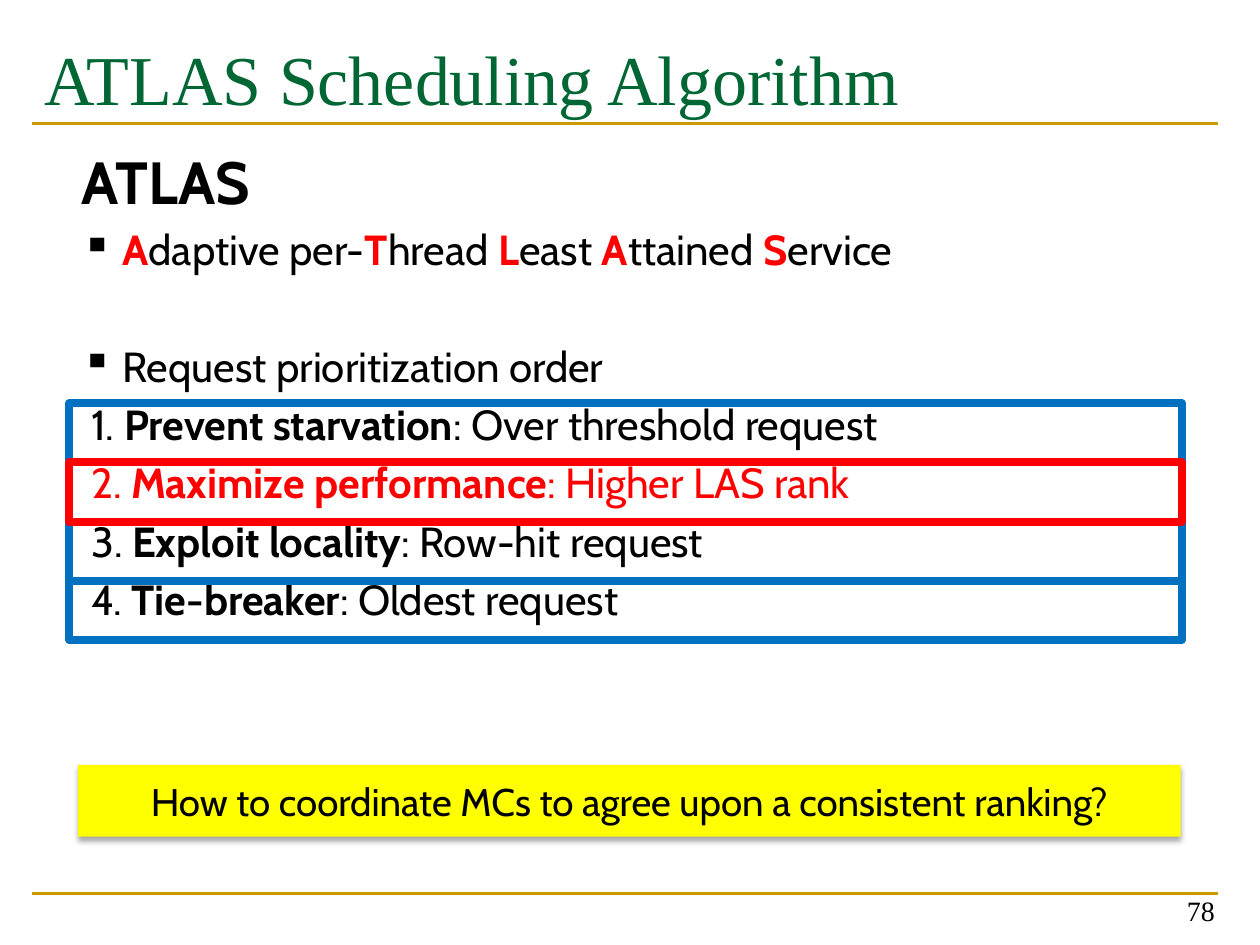
from pptx import Presentation
from pptx.dml.color import RGBColor
from pptx.enum.shapes import MSO_CONNECTOR, MSO_SHAPE
from pptx.enum.text import MSO_ANCHOR as Anchor, PP_ALIGN as Align
from pptx.oxml import parse_xml
from pptx.oxml.ns import nsdecls
from pptx.util import Inches, Pt

GREEN = RGBColor(0x00, 0x66, 0x33)
GOLD = RGBColor(0xCC, 0x99, 0x00)
BLACK = RGBColor(0x00, 0x00, 0x00)
RED = RGBColor(0xFF, 0x00, 0x00)
BLUE = RGBColor(0x00, 0x70, 0xC0)
YELLOW = RGBColor(0xFF, 0xFF, 0x00)
SERIF, SANS = "Times New Roman", "Cabin"

TITLE = "ATLAS Scheduling Algorithm"
HEADING = "ATLAS"
ACRONYM = [(" A", "daptive per-"), ("T", "hread "), ("L", "east "),
           ("A", "ttained "), ("S", "ervice")]
ORDER_INTRO = " Request prioritization order"
PRIORITIES = [("Prevent starvation", "Over threshold request"),
              ("Maximize performance", "Higher LAS rank"),
              ("Exploit locality", "Row-hit request"),
              ("Tie-breaker", "Oldest request")]
HIGHLIGHT = 1
QUESTION = "How to coordinate MCs to agree upon a consistent ranking?"
PAGE = "78"

RULE_LEFT, RULE_WIDTH = 0.25, 9.42
RULE_TOPS = (7.09, 0.98)
ROW_LEFT, ROW_TOP, ROW_WIDTH, ROW_HEIGHT = 0.55, 3.2, 8.83, 0.47
LINE_GAP, SECTION_GAP = 4.4, 38


def box(left, top, width, height):
    return [Inches(v) for v in (left, top, width, height)]


def style(run, size, color=BLACK, bold=False, face=SANS):
    run.font.size, run.font.bold, run.font.name = Pt(size), bold, face
    run.font.color.rgb = color


def write(paragraph, pieces, size=24, gap=LINE_GAP):
    paragraph.space_before = Pt(gap)
    for text, color, bold in pieces:
        run = paragraph.add_run()
        run.text = text
        style(run, size, color, bold)


def add_bullet(paragraph):
    props = paragraph._p.get_or_add_pPr()
    props.append(parse_xml(
        f'<a:buClr {nsdecls("a")}><a:srgbClr val="{BLACK}"/></a:buClr>'))
    props.append(parse_xml(f'<a:buChar {nsdecls("a")} char="▪"/>'))


def add_hanging(paragraph, inches):
    props = paragraph._p.get_or_add_pPr()
    props.set("marL", str(Inches(inches)))
    props.set("indent", str(-Inches(inches)))


def add_rule(slide, top):
    rule = slide.shapes.add_connector(
        MSO_CONNECTOR.STRAIGHT, Inches(RULE_LEFT), Inches(top),
        Inches(RULE_LEFT + RULE_WIDTH), Inches(top))
    rule.line.color.rgb, rule.line.width = GOLD, Pt(1.5)
    rule._element.spPr.append(parse_xml(f'<a:effectLst {nsdecls("a")}/>'))


def add_title(slide):
    title = slide.shapes.title
    title.left, title.top, title.width, title.height = box(
        RULE_LEFT, 0.17, RULE_WIDTH, 1.17)
    frame = title.text_frame
    frame.text = TITLE
    frame.vertical_anchor, frame.margin_top = Anchor.TOP, Inches(0.11)
    frame.paragraphs[0].alignment = Align.LEFT
    style(frame.paragraphs[0].runs[0], 40, GREEN, face=SERIF)


def add_body(slide):
    frame = slide.shapes.add_textbox(*box(0.55, 1.1, 9.03, 4.95)).text_frame
    frame.word_wrap = True
    write(frame.paragraphs[0], [(HEADING, BLACK, True)], size=34, gap=0)

    expansion = frame.add_paragraph()
    write(expansion, [piece for initial, rest in ACRONYM
                      for piece in ((initial, RED, True), (rest, BLACK, False))])
    add_bullet(expansion)

    intro = frame.add_paragraph()
    write(intro, [(ORDER_INTRO, BLACK, False)], gap=SECTION_GAP)
    add_bullet(intro)

    for index, (goal, rule) in enumerate(PRIORITIES):
        color = RED if index == HIGHLIGHT else BLACK
        priority = frame.add_paragraph()
        write(priority, [(f" {index + 1}. ", color, False),
                         (goal, color, True), (f": {rule}", color, False)])
        add_hanging(priority, 0.56)


def add_row_frame(slide, index, color):
    row = slide.shapes.add_shape(MSO_SHAPE.RECTANGLE, *box(
        ROW_LEFT, ROW_TOP + index * ROW_HEIGHT, ROW_WIDTH, ROW_HEIGHT))
    row.shadow.inherit = False
    row.fill.background()
    row.line.color.rgb, row.line.width = color, Pt(4.5)


def add_question(slide):
    banner = slide.shapes.add_shape(MSO_SHAPE.RECTANGLE, *box(0.62, 6.07, 8.75, 0.57))
    banner.fill.solid()
    banner.fill.fore_color.rgb = YELLOW
    banner.line.fill.background()
    banner._element.spPr.append(parse_xml(
        f'<a:effectLst {nsdecls("a")}><a:outerShdw blurRad="{Pt(3.1)}" '
        f'dist="{Pt(1.8)}" dir="5400000" rotWithShape="0"><a:srgbClr val="{BLACK}">'
        '<a:alpha val="35000"/></a:srgbClr></a:outerShdw></a:effectLst>'))
    frame = banner.text_frame
    frame.text, frame.vertical_anchor = QUESTION, Anchor.MIDDLE
    frame.paragraphs[0].alignment = Align.CENTER
    style(frame.paragraphs[0].runs[0], 22)


def add_page_number(slide):
    frame = slide.shapes.add_textbox(*box(7.41, 6.91, 2.33, 0.5)).text_frame
    frame.word_wrap, frame.vertical_anchor = True, Anchor.BOTTOM
    frame.text = PAGE
    frame.paragraphs[0].alignment = Align.RIGHT
    style(frame.paragraphs[0].runs[0], 16, face=SERIF)


def main():
    deck = Presentation()
    deck.slide_width, deck.slide_height = Inches(10), Inches(7.5)
    slide = deck.slides.add_slide(deck.slide_layouts[5])
    for top in RULE_TOPS:
        add_rule(slide, top)
    add_title(slide)
    add_body(slide)
    add_page_number(slide)
    for index in range(len(PRIORITIES)):
        add_row_frame(slide, index, BLUE)
    add_row_frame(slide, HIGHLIGHT, RED)
    add_question(slide)
    deck.save("out.pptx")


if __name__ == "__main__":
    main()
